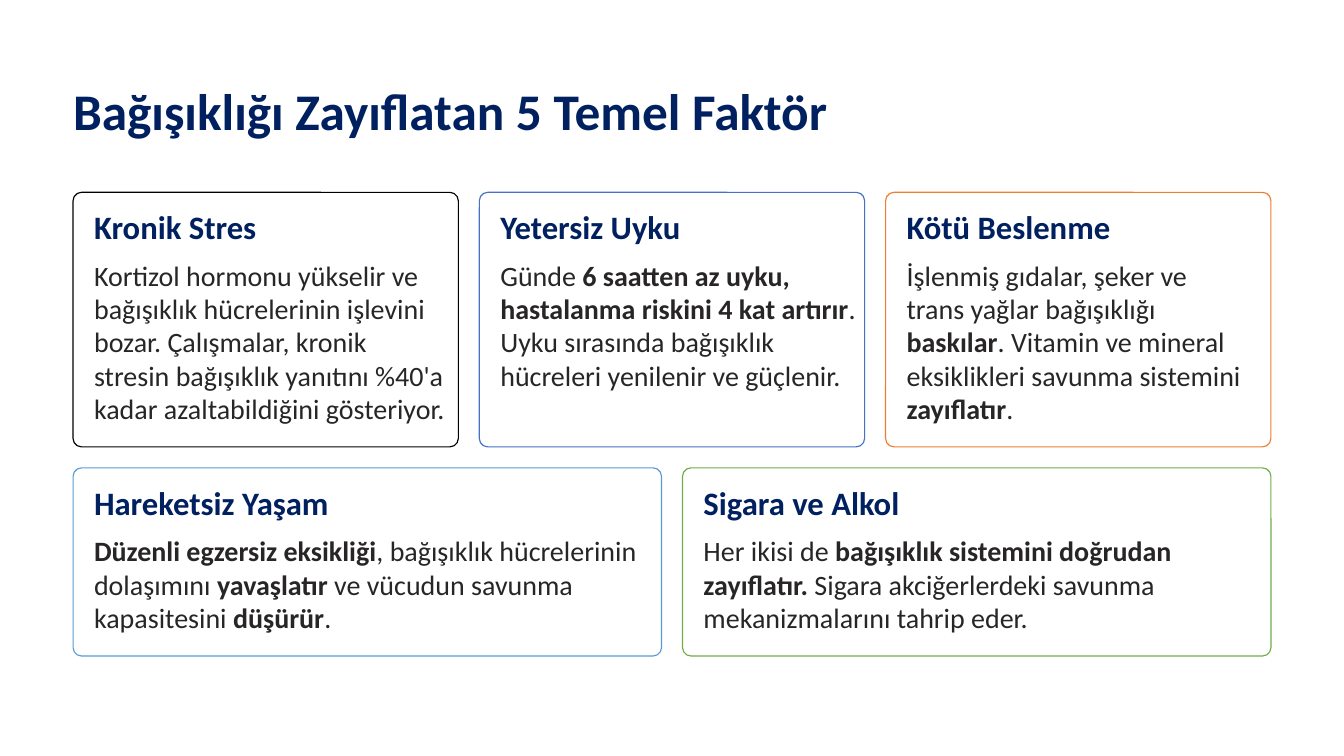
from pptx import Presentation
from pptx.dml.color import RGBColor
from pptx.enum.shapes import MSO_SHAPE
from pptx.enum.text import MSO_ANCHOR, MSO_AUTO_SIZE, PP_ALIGN
from pptx.util import Inches, Pt

ROUNDED = MSO_SHAPE.ROUNDED_RECTANGLE
TOP = MSO_ANCHOR.TOP
NO_FIT = MSO_AUTO_SIZE.NONE
LEFT_ALIGNED = PP_ALIGN.LEFT

# Theme: (size, line spacing, colour, bold) for each text style
THEME = {
    "font": "Calibri",
    "card": "FFFFFF",
    "title": (44, 55.5, "002060", True),
    "heading": (28, 27.5, "002060", True),
    "body": (24, 28.5, "272525", False),
}

# Grid
LEFT, RIGHT, GAP = 0.87, 15.13, 0.25
PADDING = 0.25
CORNER = 0.1

# Rows: top, height, cards (heading, outline, text width, text with **bold** parts)
ROWS = [
    (2.29, 3.03, [
        ("Kronik Stres", "000000", 4.19,
         "Kortizol hormonu yükselir ve bağışıklık hücrelerinin işlevini bozar. "
         "Çalışmalar, kronik stresin bağışıklık yanıtını %40'a kadar "
         "azaltabildiğini gösteriyor."),
        ("Yetersiz Uyku", "4472C4", 4.32,
         "Günde **6 saatten az uyku, hastalanma riskini 4 kat artırır**. "
         "Uyku sırasında bağışıklık hücreleri yenilenir ve güçlenir."),
        ("Kötü Beslenme", "ED7D31", 4.08,
         "İşlenmiş gıdalar, şeker ve trans yağlar bağışıklığı **baskılar**. "
         "Vitamin ve mineral eksiklikleri savunma sistemini **zayıflatır**."),
    ]),
    (5.57, 2.24, [
        ("Hareketsiz Yaşam", "5B9BD5", 6.5,
         "**Düzenli egzersiz eksikliği**, bağışıklık hücrelerinin dolaşımını "
         "**yavaşlatır** ve vücudun savunma kapasitesini **düşürür**."),
        ("Sigara ve Alkol", "70AD47", 6.5,
         "Her ikisi de **bağışıklık sistemini doğrudan zayıflatır.** "
         "Sigara akciğerlerdeki savunma mekanizmalarını tahrip eder."),
    ]),
]


def write_text(shape, text, style):
    """Fill a shape with one paragraph; parts between ** are bold."""
    size, spacing, color, bold = THEME[style]
    frame = shape.text_frame
    frame.word_wrap = True
    frame.auto_size = NO_FIT
    frame.vertical_anchor = TOP
    frame.margin_left = frame.margin_right = 0
    frame.margin_top = frame.margin_bottom = 0
    paragraph = frame.paragraphs[0]
    paragraph.alignment = LEFT_ALIGNED
    paragraph.line_spacing = Pt(spacing)
    paragraph.font.name = THEME["font"]
    paragraph.font.size = Pt(size)
    paragraph.font.bold = bold
    paragraph.font.color.rgb = RGBColor.from_string(color)
    for index, part in enumerate(text.split("**")):
        if part:
            run = paragraph.add_run()
            run.text = part
            if index % 2:
                run.font.bold = True


presentation = Presentation()
presentation.slide_width = Inches(16)
presentation.slide_height = Inches(9)
slide = presentation.slides.add_slide(presentation.slide_layouts[5])

# Title
title = slide.shapes.title
title.left, title.top = Inches(LEFT), Inches(0.9)
title.width, title.height = Inches(10.89), Inches(0.78)
write_text(title, "Bağışıklığı Zayıflatan 5 Temel Faktör", "title")

# Cards
for top, height, cards in ROWS:
    width = (RIGHT - LEFT - GAP * (len(cards) - 1)) / len(cards)
    for column, (heading, outline, text_width, text) in enumerate(cards):
        left = LEFT + column * (width + GAP)
        card = slide.shapes.add_shape(
            ROUNDED, Inches(left), Inches(top), Inches(width), Inches(height))
        card.adjustments[0] = round(CORNER / height, 3)
        card.shadow.inherit = False
        card.fill.solid()
        card.fill.fore_color.rgb = RGBColor.from_string(THEME["card"])
        card.line.color.rgb = RGBColor.from_string(outline)
        card.line.width = Pt(1)

        text_left = Inches(left + PADDING)
        heading_box = slide.shapes.add_textbox(
            text_left, Inches(top + 0.26), Inches(3.1), Inches(0.39))
        write_text(heading_box, heading, "heading")
        body_box = slide.shapes.add_textbox(
            text_left, Inches(top + 0.79), Inches(text_width), Inches(height - 1.05))
        write_text(body_box, text, "body")

presentation.save("out.pptx")
